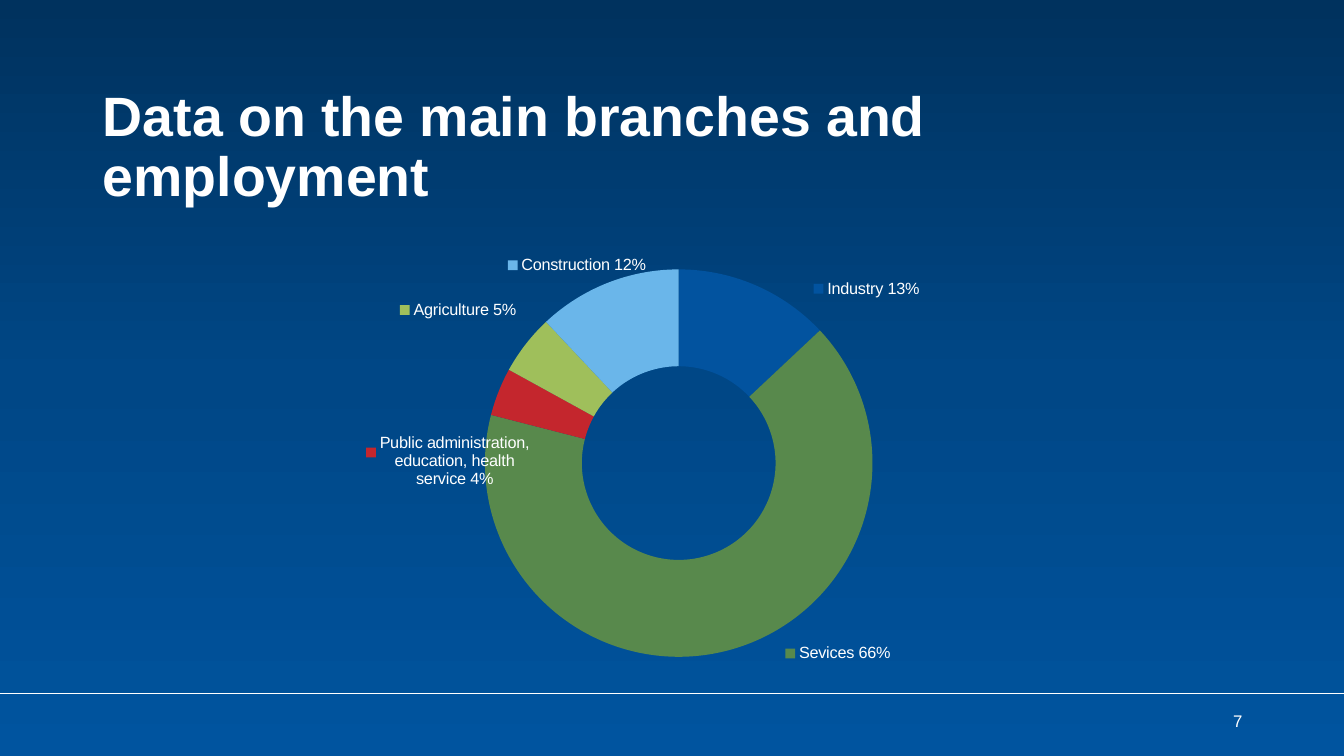
import copy

import pptx
import pptx.chart.data
import pptx.dml.color
import pptx.enum.chart
import pptx.enum.shapes
import pptx.enum.text
import pptx.oxml
import pptx.oxml.ns
import pptx.util
from pptx.util import Inches

FONT = "Arial"
WHITE = "FFFFFF"
GRADIENT = [(0, "00325E"), (0.5, "004786"), (1, "00549F")]
CHART_WIDTH, CHART_HEIGHT = 6.2, 4.11
BRANCHES = [
    ("Industry 13%", 0.13, "02539F", (1.29, -0.41)),
    ("Sevices 66%", 0.66, "58894C", (1.22, 0.49)),
    ("Public administration, education, health service 4%", 0.04, "C4262D", (-0.95, 0.51)),
    ("Agriculture 5%", 0.05, "9FBF5B", (-1.05, -0.64)),
    ("Construction 12%", 0.12, "6AB6EA", (-0.48, -0.64)),
]


def rgb(value):
    """Return the colour for a hex string."""
    return pptx.dml.color.RGBColor.from_string(value)


def style_font(font, size, color=WHITE, bold=False):
    """Set the slide font with a size in points."""
    font.name = FONT
    font.size = pptx.util.Pt(size)
    font.bold = bold
    font.color.rgb = rgb(color)


def add_backdrop(s):
    """Cover the slide with the vertical blue gradient, behind everything."""
    sp = s.shapes.add_shape(
        pptx.enum.shapes.MSO_SHAPE.RECTANGLE,
        Inches(0), Inches(0), Inches(13.33), Inches(7.5))
    sp.shadow.inherit = False
    sp.line.fill.background()
    fill = sp.fill
    fill.gradient()
    fill.gradient_angle = 270
    last = fill.gradient_stops[1]._gs
    last.addprevious(copy.deepcopy(last))
    for stop, (position, color) in zip(fill.gradient_stops, GRADIENT):
        stop.position = position
        stop.color.rgb = rgb(color)
    s.shapes.title._element.addprevious(sp._element)


def set_title(s, text):
    """Place and format the title."""
    sp = s.shapes.title
    sp.left, sp.top, sp.width, sp.height = map(Inches, (0.92, 1.43, 11.5, 0.75))
    tf = sp.text_frame
    tf.text = text
    tf.word_wrap = True
    tf.auto_size = pptx.enum.text.MSO_AUTO_SIZE.NONE
    tf.vertical_anchor = pptx.enum.text.MSO_ANCHOR.MIDDLE
    tf.margin_bottom = Inches(0.71)
    p = tf.paragraphs[0]
    p.alignment = pptx.enum.text.PP_ALIGN.LEFT
    p.line_spacing = 0.9
    style_font(p.runs[0].font, 39.6, bold=True)


def add_footer_line(s):
    """Draw the rule above the footer."""
    line = s.shapes.add_connector(
        pptx.enum.shapes.MSO_CONNECTOR.STRAIGHT,
        Inches(0), Inches(6.88), Inches(13.33), Inches(6.88))
    line.line.color.rgb = rgb(WHITE)
    line.line.width = pptx.util.Pt(1)
    line._element.spPr.append(pptx.oxml.parse_xml(
        f'<a:effectLst {pptx.oxml.ns.nsdecls("a")}/>'))


def add_page_number(s, text):
    """Add the right-aligned page number."""
    sp = s.shapes.add_textbox(Inches(9.42), Inches(6.95), Inches(3), Inches(0.4))
    tf = sp.text_frame
    tf.text = text
    tf.word_wrap = True
    tf.vertical_anchor = pptx.enum.text.MSO_ANCHOR.MIDDLE
    p = tf.paragraphs[0]
    p.alignment = pptx.enum.text.PP_ALIGN.RIGHT
    style_font(p.runs[0].font, 12)


def layout_xml(x, y, extra=""):
    """Return a manual chart layout element."""
    return pptx.oxml.parse_xml(
        f'<c:layout {pptx.oxml.ns.nsdecls("c")}><c:manualLayout>{extra}'
        f'<c:x val="{x}"/><c:y val="{y}"/></c:manualLayout></c:layout>')


def label_point(point, text, offset):
    """Give a ring segment its text label, moved by an offset in inches."""
    label = point.data_label
    tf = label.text_frame
    tf.text = text
    style_font(tf.paragraphs[0].runs[0].font, 11.6)
    dlbl = label._dLbl
    for tag in ("c:showLegendKey", "c:showSerName"):
        dlbl.find(pptx.oxml.ns.qn(tag)).set("val", "1")
    x, y = offset
    dlbl.find(pptx.oxml.ns.qn("c:idx")).addnext(
        layout_xml(x / CHART_WIDTH, y / CHART_HEIGHT))


def format_labels(labels):
    """Set the common label format and hide the leader lines."""
    labels.show_value = True
    labels.show_series_name = True
    labels.show_legend_key = True
    labels.number_format = "0%"
    labels.number_format_is_linked = False
    style_font(labels.font, 11.6)
    for leader in labels._element.findall(pptx.oxml.ns.qn("c:showLeaderLines")):
        leader.set("val", "0")


def place_ring(chart):
    """Fix the ring's place within the chart frame."""
    area = chart._chartSpace.chart.plotArea
    for old in area.findall(pptx.oxml.ns.qn("c:layout")):
        area.remove(old)
    layout = layout_xml(
        0.2, 0.03,
        '<c:layoutTarget val="inner"/><c:xMode val="edge"/><c:yMode val="edge"/>')
    for tag, size in (("w", 0.62), ("h", 0.94)):
        layout[0].append(pptx.oxml.parse_xml(
            f'<c:{tag} {pptx.oxml.ns.nsdecls("c")} val="{size}"/>'))
    area.insert(0, layout)


def add_employment_chart(s):
    """Add the doughnut chart of employment by branch."""
    data = pptx.chart.data.CategoryChartData(number_format="0%")
    data.categories = [str(i + 1) for i in range(len(BRANCHES))]
    data.add_series("", [share for _, share, _, _ in BRANCHES])
    chart = s.shapes.add_chart(
        pptx.enum.chart.XL_CHART_TYPE.DOUGHNUT, Inches(3.57), Inches(2.54),
        Inches(CHART_WIDTH), Inches(CHART_HEIGHT), data).chart
    chart.has_legend = False
    chart.has_title = False
    style_font(chart.font, 10, "000000")
    plot = chart.plots[0]
    plot.vary_by_categories = True
    series = plot.series[0]
    format_labels(series.data_labels)
    for i, (text, _, color, offset) in enumerate(BRANCHES):
        point = series.points[i]
        point.format.fill.solid()
        point.format.fill.fore_color.rgb = rgb(color)
        point.format.line.fill.background()
        label_point(point, text, offset)
    place_ring(chart)


def main():
    """Build and save the slide."""
    prs = pptx.Presentation()
    prs.slide_width, prs.slide_height = Inches(13.33), Inches(7.5)
    s = prs.slides.add_slide(prs.slide_layouts[5])
    add_backdrop(s)
    add_footer_line(s)
    set_title(s, "Data on the main branches and employment")
    add_page_number(s, "7")
    add_employment_chart(s)
    prs.save("out.pptx")


if __name__ == "__main__":
    main()
